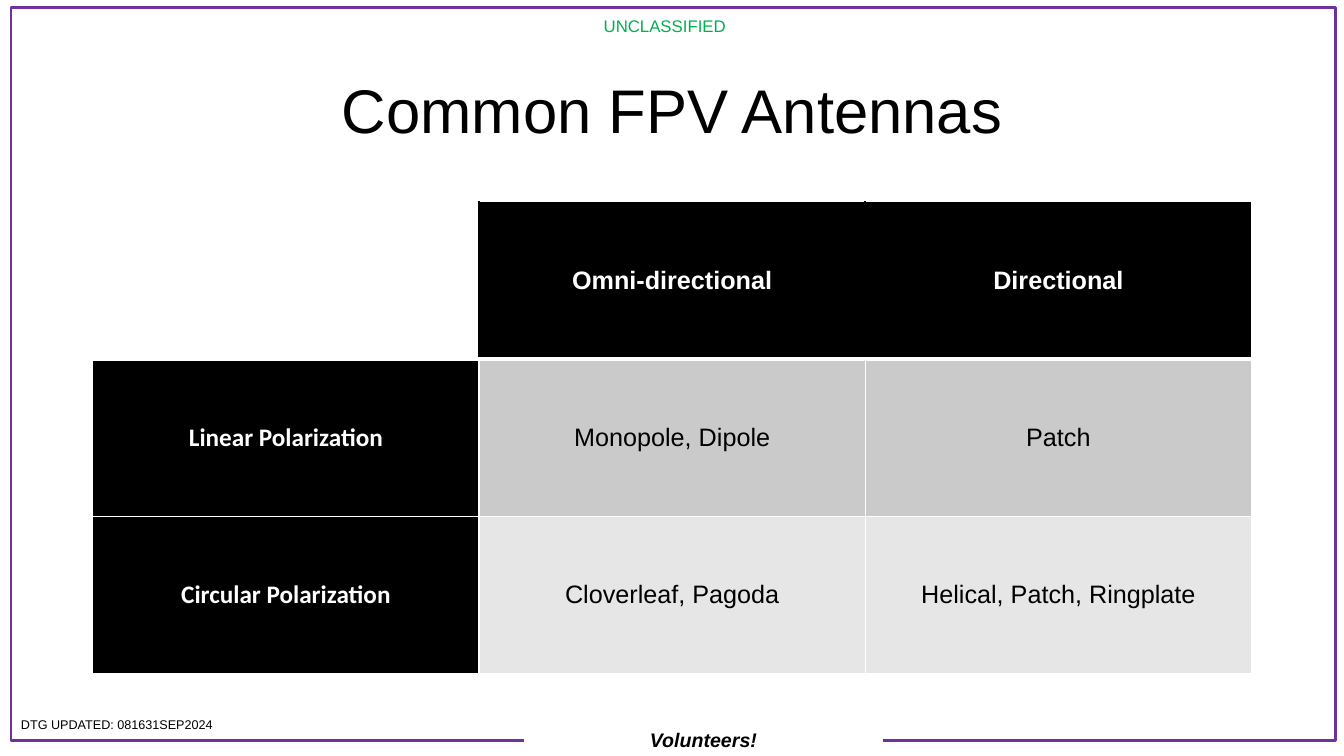
from dataclasses import dataclass

from lxml import etree
from pptx import Presentation
from pptx.dml.color import RGBColor
from pptx.enum.shapes import MSO_SHAPE
from pptx.enum.text import MSO_ANCHOR, PP_ALIGN
from pptx.oxml.ns import qn
from pptx.util import Cm, Pt

RECT = MSO_SHAPE.RECTANGLE
TOP, MIDDLE = MSO_ANCHOR.TOP, MSO_ANCHOR.MIDDLE
LEFT, CENTER = PP_ALIGN.LEFT, PP_ALIGN.CENTER


@dataclass(frozen=True)
class Theme:
    font: str = "Arial"
    row_font: str = "Calibri"
    black: str = "000000"
    white: str = "FFFFFF"
    purple: str = "7030A0"
    green: str = "00B050"
    bands: tuple = ("CACACA", "E6E6E6")
    title: int = 44
    cell: int = 18
    motto: int = 14
    marking: int = 12
    date: int = 9


THEME = Theme()
ANTENNAS = [
    ["", "Omni-directional", "Directional"],
    ["Linear Polarization", "Monopole, Dipole", "Patch"],
    ["Circular Polarization", "Cloverleaf, Pagoda", "Helical, Patch, Ringplate"],
]


def rgb(color):
    return RGBColor.from_string(color)


def write(tf, text, size, color=THEME.black, font=THEME.font,
          align=CENTER, bold=False, italic=False):
    p = tf.paragraphs[0]
    p.alignment = align
    r = p.add_run()
    r.text = text
    r.font.name = font
    r.font.size = Pt(size)
    r.font.bold = bold
    r.font.italic = italic
    r.font.color.rgb = rgb(color)
    return p


def add_text(slide, box, text, size, anchor=TOP, **style):
    tf = slide.shapes.add_textbox(*map(Cm, box)).text_frame
    tf.word_wrap = True
    tf.vertical_anchor = anchor
    return write(tf, text, size, **style)


def add_rect(slide, box):
    sp = slide.shapes.add_shape(RECT, *map(Cm, box))
    sp.shadow.inherit = False
    return sp


def add_frame(slide, box):
    x, y, w, h = box
    border = add_rect(slide, box)
    border.fill.background()
    border.line.color.rgb = rgb(THEME.purple)
    border.line.width = Pt(2)

    add_text(slide, (x + 11.79, y + 0.08, 9.37, 0.76), "UNCLASSIFIED",
             THEME.marking, color=THEME.green)

    motto = add_rect(slide, (x + 12.93, y + h - 0.43, 9.04, 0.81))
    motto.fill.solid()
    motto.fill.fore_color.rgb = rgb(THEME.white)
    motto.line.fill.background()
    motto.text_frame.vertical_anchor = MIDDLE
    write(motto.text_frame, "Volunteers!", THEME.motto, bold=True, italic=True)

    add_text(slide, (x, y + h - 0.74, 7.32, 0.64), "DTG UPDATED: 081631SEP2024",
             THEME.date, align=LEFT)


def add_title(slide, box):
    p = add_text(slide, box, "Common FPV Antennas", THEME.title, anchor=MIDDLE)
    p.line_spacing = 0.9


def set_borders(cell, borders):
    tc_pr = cell._tc.get_or_add_tcPr()
    for i, (side, (color, width)) in enumerate(borders.items()):
        ln = etree.Element(qn(f"a:ln{side}"), w=str(Pt(width)))
        fill = etree.SubElement(ln, qn("a:solidFill"))
        etree.SubElement(fill, qn("a:srgbClr"), val=color)
        tc_pr.insert(i, ln)


def cell_borders(row, col):
    thin, thick = (THEME.white, 1), (THEME.white, 3)
    header_edge = (THEME.black, 1.5)
    return {
        "L": header_edge if row == 0 and col > 0 else thin,
        "R": header_edge if row == 0 and col < 2 else thin,
        "T": thick if row == 1 else thin,
        "B": thick if row == 0 else thin,
    }


def add_antenna_table(slide, box):
    x, y, w, h = box
    n_rows, n_cols = len(ANTENNAS), len(ANTENNAS[0])
    table = slide.shapes.add_table(n_rows, n_cols, *map(Cm, box)).table
    for column in table.columns:
        column.width = Cm(w / n_cols)
    for row in table.rows:
        row.height = Cm(h / n_rows)
    for i, texts in enumerate(ANTENNAS):
        for j, text in enumerate(texts):
            cell = table.cell(i, j)
            heading = i == 0 or j == 0
            fill = THEME.black if heading else THEME.bands[i - 1]
            cell.fill.solid()
            cell.fill.fore_color.rgb = rgb(fill if text else THEME.white)
            cell.vertical_anchor = MIDDLE
            set_borders(cell, cell_borders(i, j))
            if text:
                write(cell.text_frame, text, THEME.cell, bold=heading,
                      color=THEME.white if heading else THEME.black,
                      font=THEME.row_font if j == 0 else THEME.font)


def main():
    prs = Presentation()
    prs.slide_width, prs.slide_height = Cm(33.87), Cm(19.05)
    slide = prs.slides.add_slide(prs.slide_layouts[6])
    add_frame(slide, (0.28, 0.2, 33.38, 18.47))
    add_title(slide, (2.34, 1.02, 29.21, 3.68))
    add_antenna_table(slide, (2.34, 5.08, 29.2, 11.9))
    prs.save("out.pptx")


if __name__ == "__main__":
    main()
